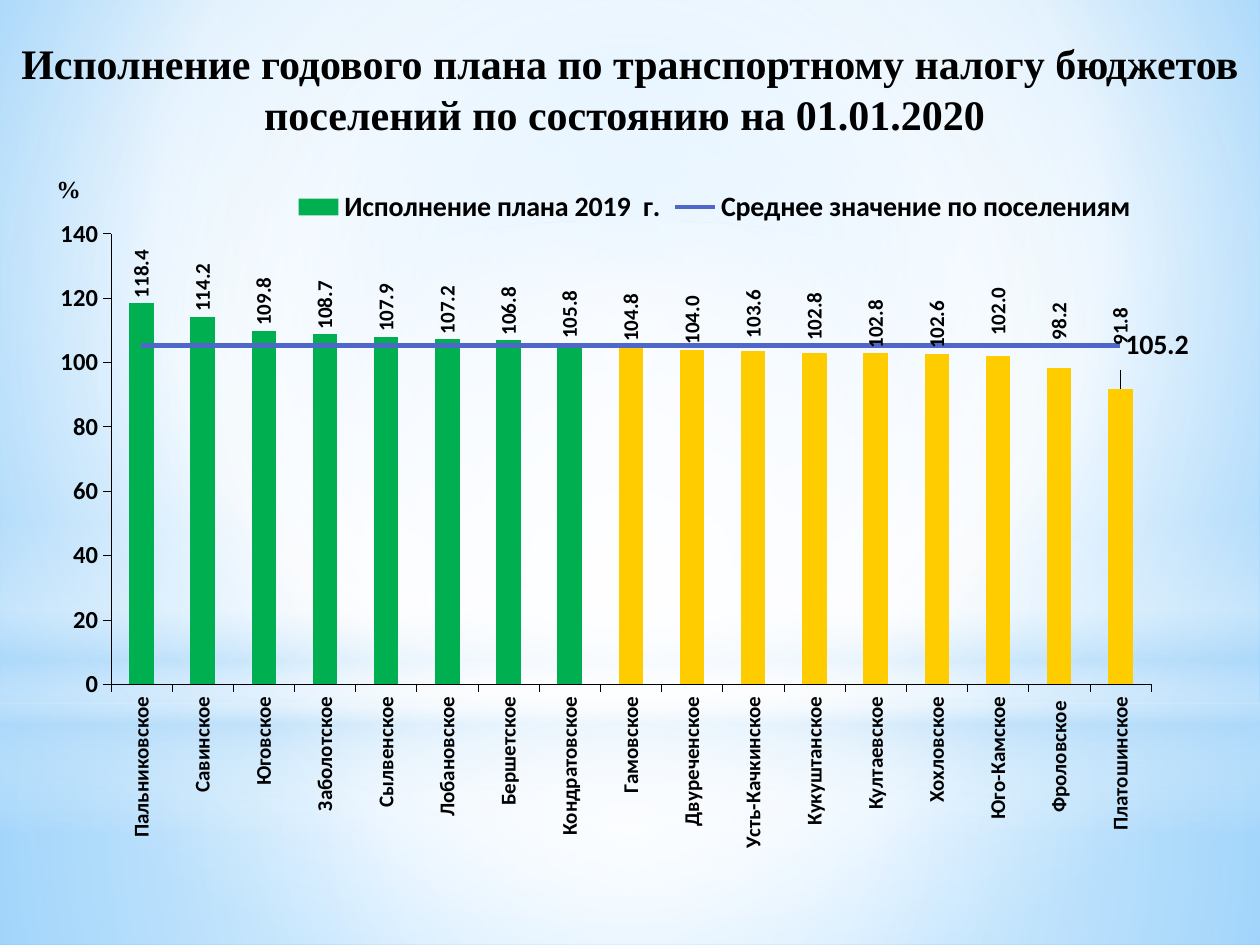
import copy
from dataclasses import dataclass

import lxml.etree
import pptx
import pptx.chart.data
import pptx.dml.color
import pptx.enum.chart
import pptx.enum.shapes
import pptx.enum.text
import pptx.oxml
import pptx.oxml.ns
import pptx.util

Inches = pptx.util.Inches
Pt = pptx.util.Pt
qn = pptx.oxml.ns.qn
MSO_SHAPE = pptx.enum.shapes.MSO_SHAPE
XL = pptx.enum.chart
NS = pptx.oxml.ns.nsdecls("a", "c")


@dataclass
class Theme:
    serif: str = "Times New Roman"
    sans: str = "Calibri"
    text: str = "000000"
    above: str = "00B050"
    below: str = "FFCC00"
    average: str = "4E67C8"
    white: str = "FFFFFF"
    haze: str = "B4DCFA"
    sky: str = "9ED5FF"
    deep_sky: str = "5BB9FF"
    title_size: int = 24
    large: int = 16
    medium: int = 14
    small: int = 12


THEME = Theme()
AVERAGE = 105.2
RESULTS = {
    "Пальниковское": 118.4, "Савинское": 114.2, "Юговское": 109.8,
    "Заболотское": 108.7, "Сылвенское": 107.9, "Лобановское": 107.2,
    "Бершетское": 106.8, "Кондратовское": 105.8, "Гамовское": 104.8,
    "Двуреченское": 104.0, "Усть-Качкинское": 103.6, "Кукуштанское": 102.8,
    "Култаевское": 102.8, "Хохловское": 102.6, "Юго-Камское": 102.0,
    "Фроловское ": 98.2, "Платошинское": 91.8,
}
LABEL_SHIFTS = {10: -0.01, 11: -0.01, 14: -0.02, 15: -0.03, 16: -0.05}


def rgb(color):
    return pptx.dml.color.RGBColor.from_string(color)


def layout_xml(target=None, **values):
    inner = f'<c:layoutTarget val="{target}"/>' if target else ""
    if "w" in values:
        inner += '<c:xMode val="edge"/><c:yMode val="edge"/>'
    inner += "".join(f'<c:{key} val="{val}"/>' for key, val in values.items())
    return pptx.oxml.parse_xml(
        f"<c:layout {NS}><c:manualLayout>{inner}</c:manualLayout></c:layout>")


def set_layout(element, layout, after):
    for old in element.findall(qn("c:layout")):
        element.remove(old)
    anchor = element.find(qn(after)) if after else None
    if anchor is None:
        element.insert(0, layout)
    else:
        anchor.addnext(layout)


class SlideBuilder:
    def __init__(self, slide, theme):
        self.slide = slide
        self.theme = theme

    def font(self, font, size, name):
        font.size = Pt(size)
        font.name = name
        font.bold = True
        font.color.rgb = rgb(self.theme.text)

    def gradient(self, fill, parent, stops, focus=None):
        fill.gradient()
        gs = "".join(
            f'<a:gs pos="{pos * 1000}"><a:srgbClr val="{color}">'
            f'<a:alpha val="{alpha * 1000}"/></a:srgbClr></a:gs>'
            for pos, color, alpha in stops)
        shade = '<a:lin ang="5400000" scaled="0"/>'
        if focus:
            sides = " ".join(f'{k}="{v * 1000}"' for k, v in zip("ltrb", focus))
            shade = f'<a:path path="circle"><a:fillToRect {sides}/></a:path>'
        old = next(parent.iter(qn("a:gradFill")))
        old.getparent().replace(old, pptx.oxml.parse_xml(
            f'<a:gradFill {NS} rotWithShape="1"><a:gsLst>{gs}</a:gsLst>{shade}</a:gradFill>'))

    def background(self, stops, focus):
        self.gradient(self.slide.background.fill, self.slide.element, stops, focus)

    def glow(self, kind, top, height, stops, focus=None):
        sp = self.slide.shapes.add_shape(
            kind, 0, Inches(top), Inches(10), Inches(height))
        sp.shadow.inherit = False
        sp.line.fill.background()
        self.gradient(sp.fill, sp.element, stops, focus)

    def text(self, box, text, size, align, top_inset=0.05):
        sp = self.slide.shapes.add_textbox(*map(Inches, box))
        tf = sp.text_frame
        tf.word_wrap = True
        tf.margin_top = Inches(top_inset)
        p = tf.paragraphs[0]
        p.alignment = align
        r = p.add_run()
        r.text = text
        self.font(r.font, size, self.theme.serif)

    def axis(self, axis, size):
        axis.has_major_gridlines = False
        axis.major_tick_mark = XL.XL_TICK_MARK.OUTSIDE
        axis.format.line.color.rgb = rgb(self.theme.text)
        axis.format.line.width = Pt(0.25)
        self.font(axis.tick_labels.font, size, self.theme.sans)

    def rotate(self, txpr):
        body = txpr.find(qn("a:bodyPr"))
        body.set("rot", "-5400000")
        body.set("vert", "horz")

    def split_line(self, chart):
        bar = chart.plots[0]._element
        ser = bar.findall(qn("c:ser"))[1]
        for old in ser.findall(qn("c:invertIfNegative")):
            ser.remove(old)
        line = pptx.oxml.parse_xml(
            f'<c:lineChart {NS}><c:grouping val="standard"/>'
            '<c:varyColors val="0"/><c:marker val="1"/></c:lineChart>')
        line.insert(2, ser)
        for axis_id in bar.findall(qn("c:axId")):
            line.append(copy.deepcopy(axis_id))
        bar.addnext(line)
        return chart.plots[1].series[0]

    def bar_labels(self, plot, series):
        labels = series.data_labels
        labels.show_value = True
        labels.number_format = "#,##0.0"
        labels.number_format_is_linked = False
        labels.position = XL.XL_LABEL_POSITION.OUTSIDE_END
        self.font(labels.font, self.theme.small, self.theme.sans)
        group = labels._element
        self.rotate(group.find(qn("c:txPr")))
        shared = [group.find(qn(tag)) for tag in ("c:numFmt", "c:txPr")]
        for i, shift in LABEL_SHIFTS.items():
            series.points[i].data_label.position = XL.XL_LABEL_POSITION.OUTSIDE_END
            label = next(d for d in group.findall(qn("c:dLbl"))
                         if d.find(qn("c:idx")).get("val") == str(i))
            for old in label.findall(qn("c:txPr")):
                label.remove(old)
            for part in reversed(shared):
                label.find(qn("c:idx")).addnext(copy.deepcopy(part))
            set_layout(label, layout_xml(x=0, y=shift), "c:idx")

    def chart(self, box, results, average):
        theme = self.theme
        data = pptx.chart.data.CategoryChartData()
        data.categories = list(results)
        data.add_series("Исполнение плана 2019  г. ", list(results.values()))
        data.add_series("Среднее значение по поселениям", [average] * len(results))
        chart = self.slide.shapes.add_chart(
            XL.XL_CHART_TYPE.COLUMN_CLUSTERED, *map(Inches, box), data).chart
        chart.has_title = False
        self.font(chart.font, 18, theme.sans)

        plot = chart.plots[0]
        plot.gap_width = 150
        plot.vary_by_categories = False
        mean = self.split_line(chart)
        bars = plot.series[0]
        bars.format.fill.solid()
        bars.format.fill.fore_color.rgb = rgb(theme.above)
        for i, value in enumerate(results.values()):
            if value < average:
                fill = bars.points[i].format.fill
                fill.solid()
                fill.fore_color.rgb = rgb(theme.below)
        self.bar_labels(plot, bars)

        mean.smooth = False
        mean.marker.style = XL.XL_MARKER_STYLE.NONE
        mean.format.line.color.rgb = rgb(theme.average)
        mean.format.line.width = Pt(2.5)
        label = mean.points[len(results) - 1].data_label
        self.font(label.font, theme.large, theme.sans)
        label.position = XL.XL_LABEL_POSITION.RIGHT

        self.axis(chart.category_axis, theme.small)
        chart.category_axis.tick_label_position = XL.XL_TICK_LABEL_POSITION.LOW
        self.rotate(chart.category_axis._element.find(qn("c:txPr")))
        axis = chart.value_axis
        self.axis(axis, theme.medium)
        axis.minimum_scale, axis.maximum_scale, axis.major_unit = 0, 140, 20
        axis.tick_labels.number_format = "0"
        axis.tick_labels.number_format_is_linked = False

        chart.has_legend = True
        chart.legend.position = XL.XL_LEGEND_POSITION.BOTTOM
        chart.legend.include_in_layout = False
        self.font(chart.legend.font, theme.large, theme.sans)
        set_layout(chart.legend._element,
                   layout_xml(x=0.21, y=0.03, w=0.71, h=0.05), "c:legendPos")
        set_layout(plot._element.getparent(),
                   layout_xml("inner", x=0.06, y=0.09, w=0.87, h=0.59), None)


def main():
    prs = pptx.Presentation()
    prs.slide_width, prs.slide_height = Inches(10), Inches(7.5)
    s = SlideBuilder(prs.slides.add_slide(prs.slide_layouts[6]), THEME)
    white, haze = THEME.white, THEME.haze
    center = (50, 50, 50, 50)
    s.background([(0, THEME.sky, 100), (60, white, 100), (100, THEME.deep_sky, 100)],
                 (20, 10, 20, 60))
    s.glow(MSO_SHAPE.RECTANGLE, 5.58, 1.92,
           [(0, white, 91), (37, white, 76), (100, haze, 79)], center)
    s.glow(MSO_SHAPE.RECTANGLE, 0, 5.58,
           [(0, white, 89), (48, white, 62), (100, haze, 79)], center)
    s.glow(MSO_SHAPE.RECTANGLE, 4.12, 2.5,
           [(0, white, 0), (29, white, 30), (45, haze, 40),
            (55, white, 26), (65, haze, 60), (100, white, 0)])
    s.glow(MSO_SHAPE.OVAL, 1.75, 5.58, [(0, white, 100), (56, white, 0)], center)
    align = pptx.enum.text.PP_ALIGN
    s.text((0, 0.21, 10, 0.54),
           "Исполнение годового плана по транспортному налогу бюджетов "
           "поселений по состоянию на 01.01.2020 ",
           THEME.title_size, align.CENTER, 0.09)
    s.chart((0.31, 1.31, 9.49, 6.06), RESULTS, AVERAGE)
    s.text((0.35, 1.33, 0.63, 0.34), "%", THEME.medium, align.LEFT)
    prs.save("out.pptx")


if __name__ == "__main__":
    main()
